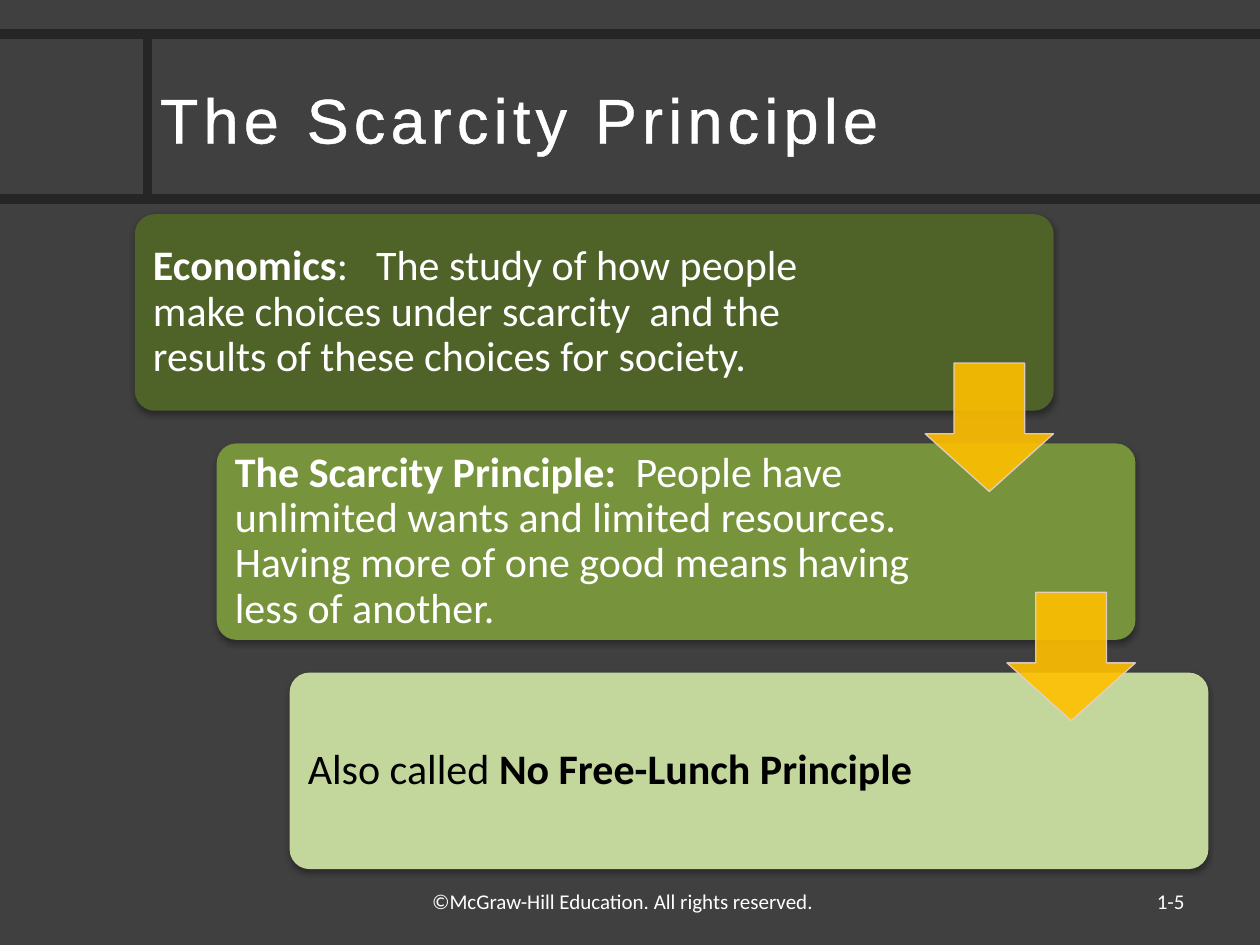
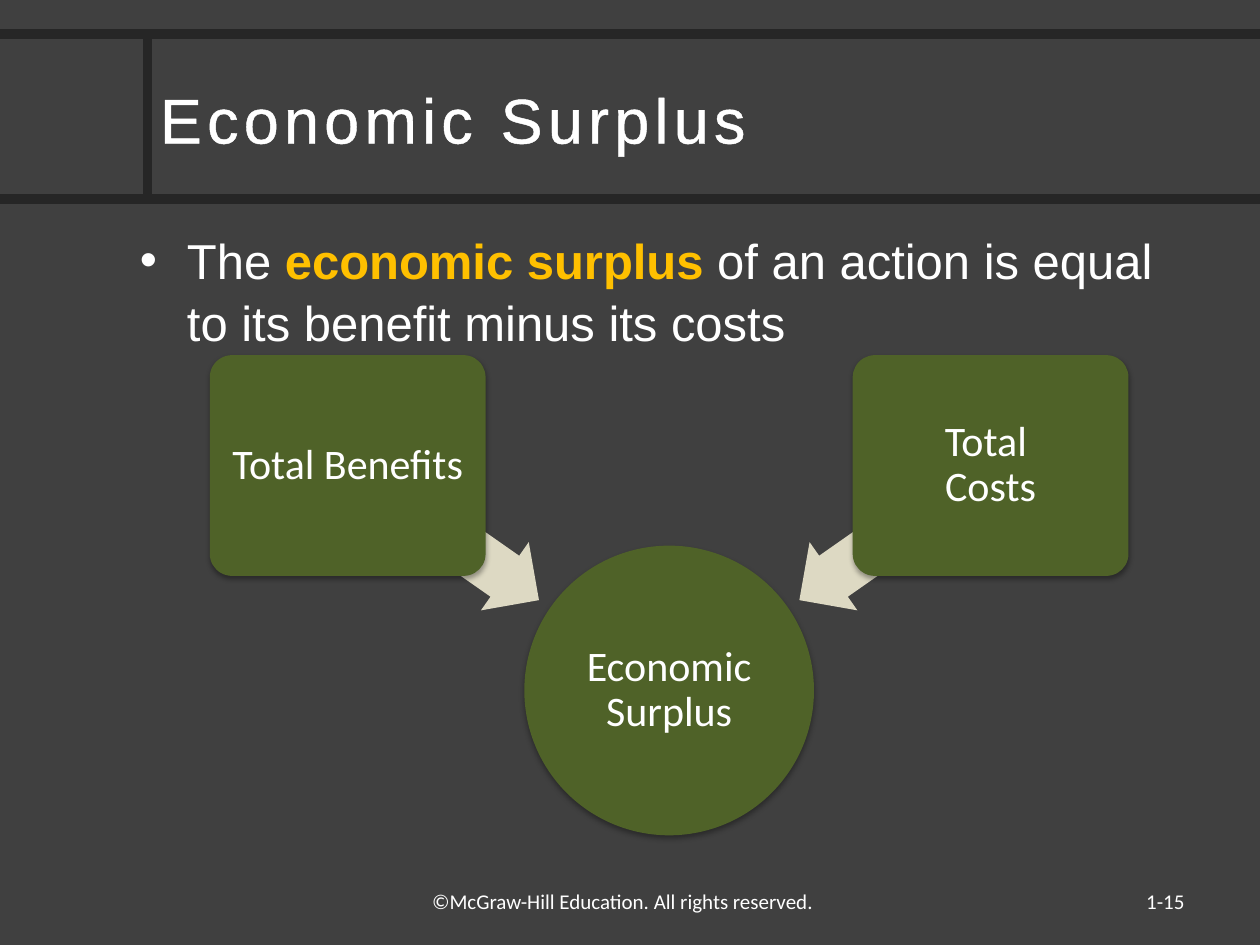
from lxml import etree
from pptx import Presentation
from pptx.dml.color import RGBColor
from pptx.enum import shapes, text
from pptx.oxml import parse_xml
from pptx.oxml.ns import nsdecls, qn
from pptx.util import Cm, Pt

GREY = RGBColor(0x40, 0x40, 0x40)
BAND = RGBColor(0x26, 0x26, 0x26)
WHITE = RGBColor(0xFF, 0xFF, 0xFF)
BLACK = RGBColor(0, 0, 0)
DARK_GREEN = RGBColor(0x4F, 0x62, 0x28)
GREEN = RGBColor(0x77, 0x93, 0x3C)
PALE_GREEN = RGBColor(0xC3, 0xD6, 0x9B)
GOLD = RGBColor(0xFF, 0xC0, 0x00)
PINK = RGBColor(0xE8, 0xD0, 0xD0)
SAND = RGBColor(0xDD, 0xD9, 0xC3)

SHAPE = shapes.MSO_SHAPE
LEFT, CENTER, RIGHT = text.PP_ALIGN.LEFT, text.PP_ALIGN.CENTER, text.PP_ALIGN.RIGHT
MIDDLE, TOP = text.MSO_ANCHOR.MIDDLE, text.MSO_ANCHOR.TOP
WIDTH, HEIGHT = 25.4, 19.05
BAND_TOP, BAND_BOTTOM, BAND_X = 0.69, 4.01, 2.97
COPYRIGHT = "©McGraw-Hill Education. All rights reserved."

SHADOW = (f'<a:effectLst {nsdecls("a")}><a:outerShdw blurRad="40000" dist="23000" '
          'dir="5400000" rotWithShape="0"><a:srgbClr val="000000">'
          '<a:alpha val="35000"/></a:srgbClr></a:outerShdw></a:effectLst>')


def set_alpha(element, percent):
    for clr in element.iter(qn("a:srgbClr")):
        etree.SubElement(clr, qn("a:alpha"), val=str(percent * 1000))


class Deck:
    """Holds the style and the current slide; all lengths are in cm."""

    def __init__(self):
        self.prs = Presentation()
        self.prs.slide_width, self.prs.slide_height = Cm(WIDTH), Cm(HEIGHT)
        fill = self.prs.slide_master.background.fill
        fill.solid()
        fill.fore_color.rgb = GREY

    def start_slide(self, title, number):
        self.s = self.prs.slides.add_slide(self.prs.slide_layouts[5])
        self.band(0, BAND_BOTTOM, WIDTH, BAND_BOTTOM)
        self.band(BAND_X, BAND_TOP, BAND_X, BAND_BOTTOM)
        self.band(0, BAND_TOP, WIDTH, BAND_TOP)
        self.title(title)
        self.text_box(18.21, 17.65, 5.92, 1.02, [(number, {})], align=RIGHT, anchor=MIDDLE)
        self.text_box(8.46, 17.78, 8.46, 0.89, [(COPYRIGHT, {})])

    def band(self, x1, y1, x2, y2):
        line = self.s.shapes.add_connector(
            shapes.MSO_CONNECTOR.STRAIGHT, Cm(x1), Cm(y1), Cm(x2), Cm(y2))
        line.line.color.rgb = BAND
        line.line.width = Pt(5.5)
        etree.SubElement(line._element.spPr, qn("a:effectLst"))

    def title(self, words):
        sp = self.s.shapes.title
        sp.left, sp.top, sp.width, sp.height = Cm(BAND_X), Cm(0.76), Cm(22.43), Cm(3.25)
        p = self.put_text(sp, [(words, {})], 36, font="Arial", anchor=MIDDLE)
        rPr = p.runs[0]._r.get_or_add_rPr()
        rPr.set("spc", "300")
        rPr.insert(0, parse_xml(
            f'<a:ln {nsdecls("a")} w="18415"><a:solidFill><a:srgbClr val="{WHITE}"/>'
            '</a:solidFill></a:ln>'))

    def put_text(self, sp, runs, size, font="Calibri", color=WHITE, align=LEFT, anchor=TOP):
        """Fill a shape with one paragraph of (text, overrides) runs."""
        tf = sp.text_frame
        tf.word_wrap = True
        tf.auto_size = text.MSO_AUTO_SIZE.NONE
        tf.vertical_anchor = anchor
        p = tf.paragraphs[0]
        p.alignment = align
        for words, look in runs:
            for i, part in enumerate(words.split("\n")):
                if i:
                    p.add_line_break()
                r = p.add_run()
                r.text = part
                r.font.size, r.font.name = Pt(size), font
                r.font.bold = look.get("bold", False)
                r.font.color.rgb = look.get("color", color)
        return p

    def text_box(self, x, y, w, h, runs, size=12, **style):
        sp = self.s.shapes.add_textbox(Cm(x), Cm(y), Cm(w), Cm(h))
        return self.put_text(sp, runs, size, **style)

    def bullet(self, x, y, w, h, runs):
        p = self.text_box(x, y, w, h, runs, size=28, font="Arial")
        p.line_spacing = 1.06
        pPr = p._p.get_or_add_pPr()
        pPr.set("marL", str(Cm(0.95)))
        pPr.set("indent", str(Cm(-0.95)))
        etree.SubElement(pPr, qn("a:buFont"), typeface="Arial")
        etree.SubElement(pPr, qn("a:buChar"), char="•")

    def shape(self, kind, x, y, w, h, fill, adjust=(), shadow=False):
        sp = self.s.shapes.add_shape(kind, Cm(x), Cm(y), Cm(w), Cm(h))
        for i, value in enumerate(adjust):
            sp.adjustments[i] = value
        sp.fill.solid()
        sp.fill.fore_color.rgb = fill
        sp.line.fill.background()
        if shadow:
            sp._element.spPr.append(parse_xml(SHADOW))
        else:
            sp.shadow.inherit = False
        return sp

    def panel(self, kind, x, y, w, h, fill, runs, inset, right=None, tab=None, **style):
        """Shadowed shape with text; right is the right inset if it differs."""
        adjust = (0.1,) if kind == SHAPE.ROUNDED_RECTANGLE else ()
        sp = self.shape(kind, x, y, w, h, fill, adjust, shadow=True)
        tf = sp.text_frame
        tf.margin_left = tf.margin_top = tf.margin_bottom = Cm(inset)
        tf.margin_right = Cm(inset if right is None else right)
        p = self.put_text(sp, runs, 24, anchor=MIDDLE, **style)
        p.line_spacing = 0.9
        if tab:
            tabs = etree.SubElement(p._p.get_or_add_pPr(), qn("a:tabLst"))
            etree.SubElement(tabs, qn("a:tab"), pos=str(Cm(tab)), algn="l")

    def step_arrow(self, x, y, size):
        sp = self.shape(SHAPE.DOWN_ARROW, x, y, size, size, GOLD, (0.55, 0.45))
        sp.line.color.rgb = PINK
        sp.line.width = Pt(0.75)
        set_alpha(sp._element.spPr, 90)


def scarcity_slide(deck):
    deck.start_slide("The Scarcity Principle", "1-5")
    bold = {"bold": True}
    cards = [
        (2.72, DARK_GREEN, WHITE, 4.5, [
            ("Economics", bold),
            (":\tThe study of how people make choices under scarcity  and the "
             "results of these choices for society.", {})]),
        (4.37, GREEN, WHITE, None, [
            ("The Scarcity Principle:  ", bold),
            ("People have unlimited wants and limited resources.  Having more of "
             "one good means having less of another.", {})]),
        (5.84, PALE_GREEN, BLACK, None, [
            ("Also called ", {}), ("No Free-Lunch Principle", bold)]),
    ]
    top, step, width, height, arrow = 4.32, 4.62, 18.52, 3.96, 2.59
    for i, (x, fill, color, tab, runs) in enumerate(cards):
        deck.panel(SHAPE.ROUNDED_RECTANGLE, x, top + i * step, width, height, fill,
                   runs, 0.25, right=4.4, tab=tab, color=color)
    for i, (x, *_) in enumerate(cards[:-1]):
        deck.step_arrow(x + width - arrow, top + i * step + 3, arrow)


def surplus_slide(deck):
    deck.start_slide("Economic Surplus", "1-15")
    deck.bullet(2.57, 4.45, 21.56, 12.57, [
        ("The ", {}),
        ("economic surplus ", {"bold": True, "color": GOLD}),
        ("of an action is equal to its benefit minus its costs", {})])
    middle, circle = 13.49, 5.84
    deck.panel(SHAPE.OVAL, middle - circle / 2, 11, circle, circle, DARK_GREEN,
               [("Economic Surplus", {})], 0.05, align=CENTER)
    box_w, box_h, arrow_w, arrow_h = 5.56, 4.45, 4.7, 1.68
    for side, label, angle in ((-1, "Total Benefits", 215), (1, "Total \nCosts", 325)):
        arrow = deck.shape(SHAPE.LEFT_ARROW, middle + side * 4.55 - arrow_w / 2, 9.91,
                           arrow_w, arrow_h, SAND, (0.6, 0.5))
        arrow.rotation = angle
        deck.panel(SHAPE.ROUNDED_RECTANGLE, middle + side * 6.48 - box_w / 2, 7.16,
                   box_w, box_h, DARK_GREEN, [(label, {})], 0.13, align=CENTER)


def main():
    deck = Deck()
    scarcity_slide(deck)
    surplus_slide(deck)
    deck.prs.save("out.pptx")


if __name__ == "__main__":
    main()
